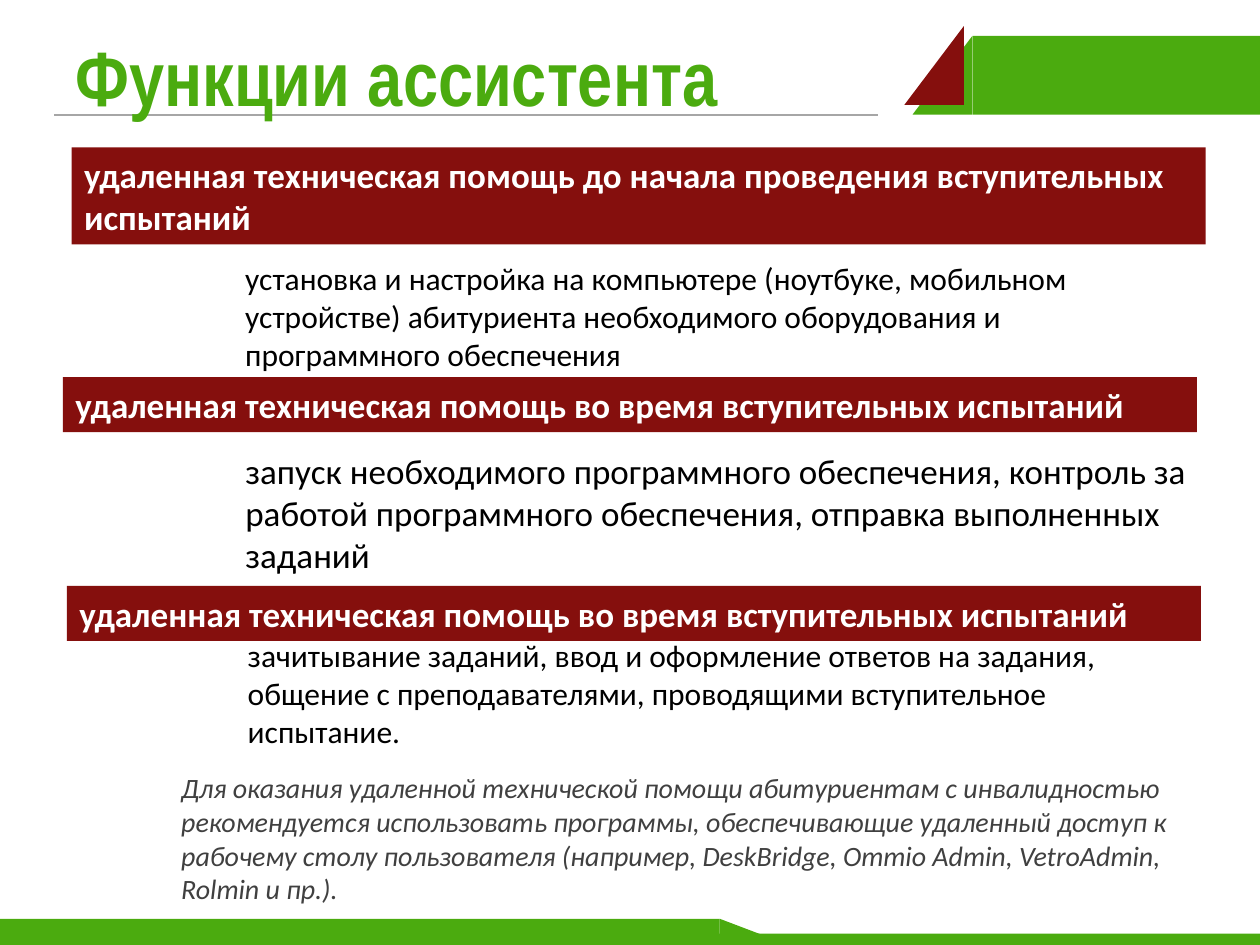
import pptx
import pptx.dml.color
import pptx.enum.shapes
import pptx.enum.text
import pptx.oxml
import pptx.oxml.ns
import pptx.util

Pt = pptx.util.Pt
RGBColor = pptx.dml.color.RGBColor
MSO_SHAPE = pptx.enum.shapes.MSO_SHAPE
MSO_ANCHOR = pptx.enum.text.MSO_ANCHOR

GREEN = RGBColor(0x4B, 0xAB, 0x0F)
DARK_RED = RGBColor(0x85, 0x0F, 0x0D)
RULE_GREY = RGBColor(0xA6, 0xA6, 0xA6)
NOTE_GREY = RGBColor(0x40, 0x40, 0x40)
BLACK = RGBColor(0, 0, 0)
WHITE = RGBColor(0xFF, 0xFF, 0xFF)

DURING_EXAMS = "удаленная техническая помощь во время вступительных испытаний"
# left, top, width, height in points, then the wording
HEADINGS = [
    (41, 84.25, 648, 55.5,
     "удаленная техническая помощь до начала проведения вступительных испытаний"),
    (36, 215.5, 648, 31.5, DURING_EXAMS),
    (38.25, 334.75, 648, 31.5, DURING_EXAMS),
]
SETUP = ("установка и настройка на компьютере (ноутбуке, мобильном устройстве) "
         "абитуриента необходимого оборудования и программного обеспечения")
LAUNCH = ("запуск необходимого программного обеспечения, контроль за работой "
          "программного обеспечения, отправка выполненных заданий")
READING = ("зачитывание заданий, ввод и оформление ответов на задания, общение "
           "с преподавателями, проводящими вступительное испытание.")
RECOMMENDATION = (
    "Для оказания удаленной технической помощи абитуриентам с инвалидностью "
    "рекомендуется использовать программы, обеспечивающие удаленный доступ к "
    "рабочему столу пользователя (например, DeskBridge, Ommio Admin, VetroAdmin, "
    "Rolmin и пр.).")


def write_text(shape, text, size, color, font="Calibri", bold=False, italic=False,
               anchor=MSO_ANCHOR.TOP):
    frame = shape.text_frame
    frame.word_wrap = True
    frame.auto_size = pptx.enum.text.MSO_AUTO_SIZE.NONE
    frame.vertical_anchor = anchor
    paragraph = frame.paragraphs[0]
    paragraph.alignment = pptx.enum.text.PP_ALIGN.LEFT
    run = paragraph.add_run()
    run.text = text
    run.font.name = font
    run.font.size = Pt(size)
    run.font.bold = bold
    run.font.italic = italic
    run.font.color.rgb = color


def place(shape, left, top, width, height):
    shape.left, shape.top = Pt(left), Pt(top)
    shape.width, shape.height = Pt(width), Pt(height)


def add_block(slide, kind, left, top, width, height, color, mirrored=False):
    block = slide.shapes.add_shape(kind, Pt(left), Pt(top), Pt(width), Pt(height))
    block.shadow.inherit = False
    block.fill.solid()
    block.fill.fore_color.rgb = color
    block.line.fill.background()
    if mirrored:
        block.element.spPr.get_or_add_xfrm().set("flipH", "1")
    return block


def add_rule(slide, left, right, top):
    rule = slide.shapes.add_connector(
        pptx.enum.shapes.MSO_CONNECTOR.STRAIGHT, Pt(left), Pt(top), Pt(right), Pt(top))
    rule.line.color.rgb = RULE_GREY
    rule.line.width = Pt(0.75)
    rule.element.spPr.append(pptx.oxml.parse_xml(
        "<a:effectLst %s/>" % pptx.oxml.ns.nsdecls("a")))


def add_decoration(slide):
    add_rule(slide, 31, 502, 65.75)
    bar, wedge = MSO_SHAPE.RECTANGLE, MSO_SHAPE.RIGHT_TRIANGLE
    add_block(slide, bar, 555.75, 20.5, 164.25, 45, GREEN)
    add_block(slide, wedge, 521.5, 20.5, 34.25, 45, GREEN, mirrored=True)
    add_block(slide, bar, 0, 525, 411.25, 15, GREEN)
    add_block(slide, wedge, 411.25, 525, 39.5, 15, GREEN)
    add_block(slide, bar, 173, 533.5, 547, 6.5, GREEN)
    add_block(slide, wedge, 516.75, 15, 34, 45, DARK_RED, mirrored=True)


def add_heading(slide, left, top, width, height, text):
    heading = add_block(slide, MSO_SHAPE.RECTANGLE, left, top, width, height, DARK_RED)
    write_text(heading, text, 20, WHITE, bold=True)


def add_text(slide, left, top, width, height, text, **text_format):
    box = slide.shapes.add_textbox(Pt(left), Pt(top), Pt(width), Pt(height))
    write_text(box, text, **text_format)


def fill_placeholder(placeholder, position, text, **text_format):
    """Place and fill the placeholder, above what is already on the slide."""
    place(placeholder, *position)
    write_text(placeholder, text, **text_format)
    placeholder.element.getparent().append(placeholder.element)


def remove_bullet(paragraph):
    properties = paragraph._p.get_or_add_pPr()
    properties.set("marL", "0")
    properties.set("indent", "0")
    properties.append(pptx.oxml.parse_xml(
        "<a:buNone %s/>" % pptx.oxml.ns.nsdecls("a")))


def main():
    presentation = pptx.Presentation()
    presentation.slide_width, presentation.slide_height = Pt(720), Pt(540)
    slide = presentation.slides.add_slide(presentation.slide_layouts[1])
    title, body = slide.shapes.title, slide.placeholders[1]

    add_decoration(slide)
    fill_placeholder(title, (36, 13, 648, 90), "Функции ассистента",
                     size=44, color=GREEN, font="Arial Narrow", bold=True)
    fill_placeholder(body, (133, 253.5, 587.5, 69), LAUNCH, size=20, color=BLACK)
    remove_bullet(body.text_frame.paragraphs[0])

    for heading in HEADINGS:
        add_heading(slide, *heading)
    add_text(slide, 133, 144.75, 545.75, 72.75, SETUP, size=18, color=BLACK)
    add_text(slide, 134.5, 360, 535, 72.75, READING, size=18, color=BLACK)
    add_text(slide, 96.5, 437, 601, 85, RECOMMENDATION,
             size=16, color=NOTE_GREY, italic=True)

    presentation.save("out.pptx")


if __name__ == "__main__":
    main()
